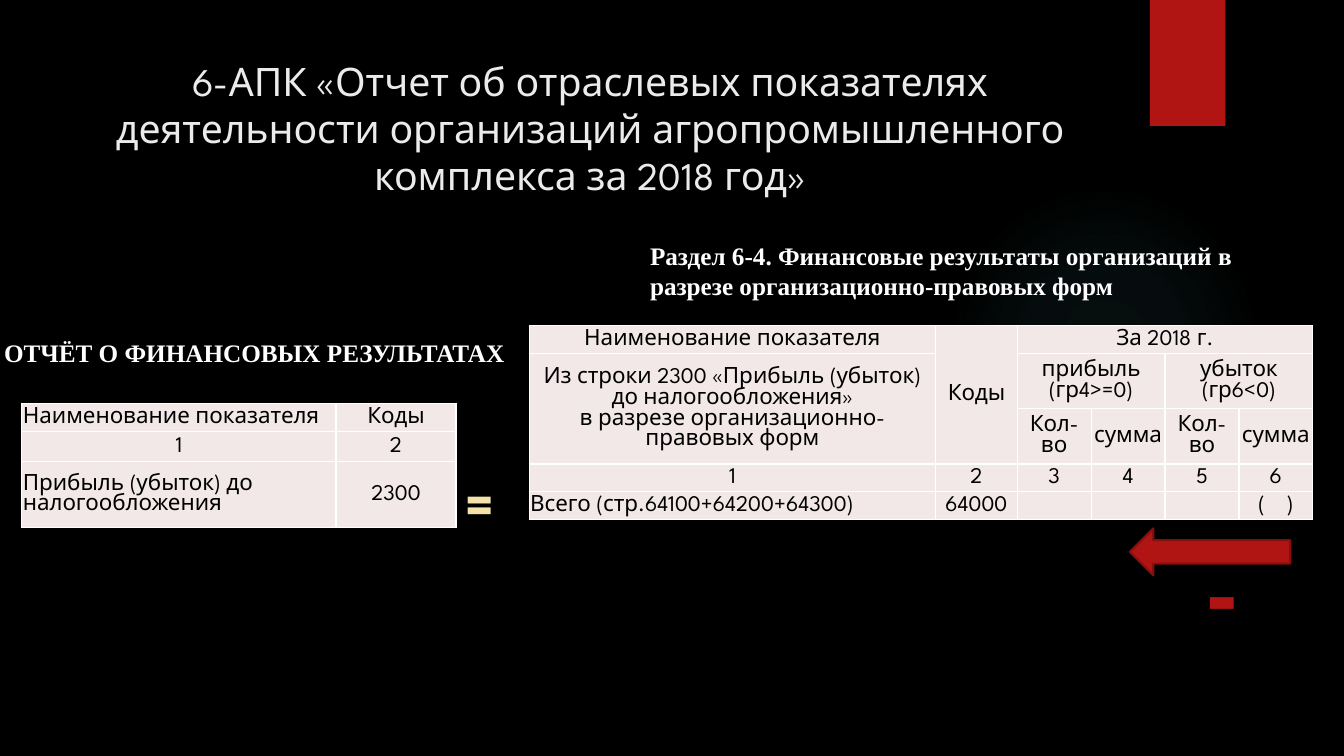
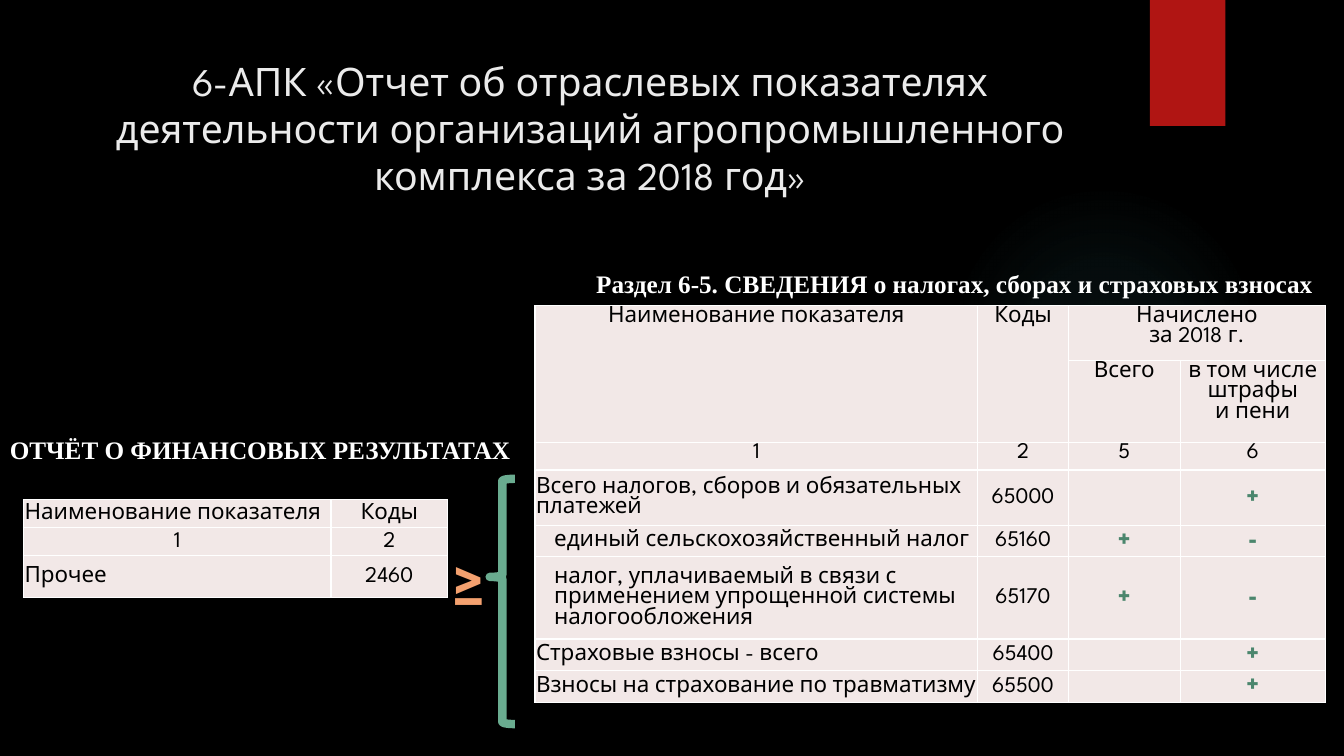
from lxml import etree
from pptx import Presentation
from pptx.dml.color import RGBColor
from pptx.enum.shapes import MSO_SHAPE
from pptx.enum.text import MSO_ANCHOR, PP_ALIGN
from pptx.oxml.ns import qn
from pptx.util import Inches, Pt

LEFT, CENTER = PP_ALIGN.LEFT, PP_ALIGN.CENTER
TOP, MIDDLE = MSO_ANCHOR.TOP, MSO_ANCHOR.MIDDLE
RECTANGLE, ELLIPSE = MSO_SHAPE.RECTANGLE, MSO_SHAPE.OVAL
LEFT_ARROW, LEFT_BRACE = MSO_SHAPE.LEFT_ARROW, MSO_SHAPE.LEFT_BRACE

SLIDE_WIDTH, SLIDE_HEIGHT = Inches(13.333), Inches(7.5)
GRID_COLUMNS = 160
UNIT = SLIDE_WIDTH / GRID_COLUMNS

SANS, SERIF = "League Spartan", "Times New Roman"
COLORS = {
    "background": "000000",
    "title": "EBEBEB",
    "heading": "FFFFFF",
    "glow": "50B9C1",
    "red": "B01513",
    "dark_red": "82100E",
    "cell": "F2E8E7",
    "cell_text": "000000",
    "border": "FFFFFF",
    "equals": "F5E2A9",
    "at_least": "F4A16F",
    "sign": "4B866D",
    "brace": "6AAC90",
}
TITLE = ("6-АПК «Отчет об отраслевых показателях деятельности организаций "
         "агропромышленного комплекса за 2018 год»")
REPORT = "ОТЧЁТ О ФИНАНСОВЫХ РЕЗУЛЬТАТАХ"
REPORT_HEADER = [["Наименование показателя", "Коды"], ["1", "2"]]
CELL_MARGIN, CELL_INDENT = Inches(0.01), Inches(0.19)


def grid(*lengths):
    return [round(length * UNIT) for length in lengths]


def color(name):
    return RGBColor.from_string(COLORS[name])


def write(text_frame, text, size=16, font=SANS, ink="cell_text", bold=False,
          align=LEFT):
    text_frame.text = text
    for paragraph in text_frame.paragraphs:
        paragraph.alignment = align
        for run in paragraph.runs:
            run.font.size = Pt(size)
            run.font.name = font
            run.font.bold = bold
            run.font.color.rgb = color(ink)
        if not text:
            end = etree.SubElement(paragraph._p, qn("a:endParaRPr"), sz=str(size * 100))
            etree.SubElement(end, qn("a:latin"), typeface=font)


def add_text(slide, area, text, wrap=True, anchor=TOP, **style):
    text_frame = slide.shapes.add_textbox(*grid(*area)).text_frame
    text_frame.word_wrap = wrap
    text_frame.vertical_anchor = anchor
    write(text_frame, text, **style)


def add_heading(slide, area, text, wrap=True):
    add_text(slide, area, text, wrap, size=18, font=SERIF, ink="heading", bold=True)


def add_shape(slide, kind, area, fill=None, line=None, line_width=1):
    shape = slide.shapes.add_shape(kind, *grid(*area))
    shape.shadow.inherit = False
    if fill:
        shape.fill.solid()
        shape.fill.fore_color.rgb = color(fill)
    else:
        shape.fill.background()
    if line:
        shape.line.color.rgb = color(line)
        shape.line.width = Pt(line_width)
    else:
        shape.line.fill.background()
    return shape


def add_glow(slide):
    shape = add_shape(slide, ELLIPSE, (112.9, 22, 37, 37))
    gradient = etree.Element(qn("a:gradFill"), rotWithShape="1")
    stops = etree.SubElement(gradient, qn("a:gsLst"))
    for position, opacity in ((0, 7), (36, 6), (69, 0)):
        stop = etree.SubElement(stops, qn("a:gs"), pos=str(position * 1000))
        tint = etree.SubElement(stop, qn("a:srgbClr"), val=COLORS["glow"])
        etree.SubElement(tint, qn("a:alpha"), val=str(opacity * 1000))
    center = etree.SubElement(gradient, qn("a:path"), path="circle")
    sides = dict.fromkeys("ltrb", "50000")
    etree.SubElement(center, qn("a:fillToRect"), **sides)
    properties = shape._element.spPr
    properties.replace(properties.find(qn("a:noFill")), gradient)


def add_borders(cell):
    properties = cell._tc.get_or_add_tcPr()
    for side in ("lnL", "lnR", "lnT", "lnB"):
        line = etree.SubElement(properties, qn(f"a:{side}"), w=str(Pt(1)))
        fill = etree.SubElement(line, qn("a:solidFill"))
        etree.SubElement(fill, qn("a:srgbClr"), val=COLORS["border"])


def fill_cell(cell, text, align, anchor, indent):
    cell.margin_left = indent
    cell.margin_right = cell.margin_top = CELL_MARGIN
    cell.margin_bottom = 0
    cell.vertical_anchor = anchor
    add_borders(cell)
    cell.fill.solid()
    cell.fill.fore_color.rgb = color("cell")
    if text in ("+", "-"):
        write(cell.text_frame, text, size=18, ink="sign", bold=True, align=align)
    else:
        write(cell.text_frame, text, align=align)


def add_table(slide, corner, widths, heights, rows, merges=(), left_rows=(),
              indented_rows=(), top_rows=0):
    area = grid(*corner, sum(widths), sum(heights))
    table = slide.shapes.add_table(len(rows), len(widths), *area).table
    for column, width in zip(table.columns, grid(*widths)):
        column.width = width
    for row, height in zip(table.rows, grid(*heights)):
        row.height = height
    for row_index, row in enumerate(rows):
        for column_index, text in enumerate(row):
            is_label = column_index == 0
            fill_cell(
                table.cell(row_index, column_index), text,
                LEFT if is_label and row_index in left_rows else CENTER,
                TOP if row_index < top_rows else MIDDLE,
                CELL_INDENT if is_label and row_index in indented_rows else CELL_MARGIN)
    for first, last in merges:
        table.cell(*first).merge(table.cell(*last))


def add_report(slide, label_corner, corner, widths, heights, row):
    add_heading(slide, (*label_corner, 62.6, 4.8), REPORT, wrap=False)
    add_table(slide, corner, widths, heights, REPORT_HEADER + [row], left_rows=(0, 2))


def add_base_slide(presentation):
    slide = presentation.slides.add_slide(presentation.slide_layouts[6])
    slide.background.fill.solid()
    slide.background.fill.fore_color.rgb = color("background")
    add_glow(slide)
    add_shape(slide, RECTANGLE, (136.9, 0, 9, 15), fill="red")
    add_text(slide, (8.5, 6, 123.5, 18.4), TITLE, anchor=MIDDLE, size=28,
             ink="title", align=CENTER)
    return slide


def add_profit_slide(presentation):
    slide = add_base_slide(presentation)
    add_heading(slide, (76.2, 28, 80, 8.5),
                "Раздел 6-4. Финансовые результаты организаций в разрезе "
                "организационно-правовых форм")
    add_report(slide, (-0.7, 39.6), (2.6, 48), (37.4, 14.3), (3.3, 3.6, 7.9),
               ["Прибыль (убыток) до налогообложения", "2300"])
    add_text(slide, (54.2, 55.2, 6.5, 9.2), "=", wrap=False, size=40,
             ink="equals", bold=True)
    rows = [
        ["Наименование показателя", "Коды", "За 2018 г.", "", "", ""],
        ["Из строки 2300 «Прибыль (убыток) до налогообложения»\n"
         "в разрезе организационно-правовых форм", "",
         "прибыль (гр4>=0)", "", "убыток (гр6<0)", ""],
        ["", "", "Кол-во", "сумма", "Кол-во", "сумма"],
        ["1", "2", "3", "4", "5", "6"],
        ["Всего (стр.64100+64200+64300)", "64000", "", "", "", "(    )"],
    ]
    merges = [((0, 1), (2, 1)), ((0, 2), (0, 5)), ((1, 0), (2, 0)),
              ((1, 2), (1, 3)), ((1, 4), (1, 5))]
    add_table(slide, (63, 38.8), (48.4, 9.7, 8.8, 8.8, 8.8, 8.8),
              (3.3, 6.5, 6.6, 3.3, 3.3), rows, merges, left_rows=(4,))
    add_text(slide, (142.3, 62.8, 7.1, 14.5), "-", size=66, ink="red", bold=True)
    add_shape(slide, LEFT_ARROW, (134.5, 62.9, 19.1, 5.6), "red", "dark_red", 1.5)


def add_tax_slide(presentation):
    slide = add_base_slide(presentation)
    add_heading(slide, (69.8, 31.4, 90.1, 4.8),
                "Раздел 6-5. СВЕДЕНИЯ о налогах, сборах и страховых взносах")
    add_report(slide, (0, 51.1), (2.8, 59.5), (36.6, 13.9), (3.3, 3.3, 5),
               ["Прочее", "2460"])
    rows = [
        ["Наименование показателя", "Коды", "Начислено\nза 2018 г.", ""],
        ["", "", "Всего", "в том числе штрафы\nи пени"],
        ["1", "2", "5", "6"],
        ["Всего налогов, сборов и обязательных платежей", "65000", "", "+"],
        ["единый сельскохозяйственный налог", "65160", "+", "-"],
        ["налог, уплачиваемый в связи с применением упрощенной системы "
         "налогообложения", "65170", "+", "-"],
        ["Страховые взносы - всего", "65400", "", "+"],
        ["Взносы на страхование по травматизму", "65500", "", "+"],
    ]
    merges = [((0, 0), (1, 0)), ((0, 1), (1, 1)), ((0, 2), (0, 3))]
    add_table(slide, (63.7, 36.4), (52.7, 10.8, 13.3, 17.3),
              (6.5, 9.7, 3.3, 6.6, 3.7, 9.8, 3.7, 3.8), rows, merges,
              left_rows=range(3, 8), indented_rows=(4, 5), top_rows=3)
    brace = add_shape(slide, LEFT_BRACE, (58.3, 57, 3, 29.2), line="brace",
                      line_width=6)
    brace.adjustments[0], brace.adjustments[1] = 0.08, 0.4
    add_text(slide, (52.8, 64.8, 6.1, 9.2), "≥", wrap=False, size=40,
             ink="at_least", bold=True)


def main():
    presentation = Presentation()
    presentation.slide_width, presentation.slide_height = SLIDE_WIDTH, SLIDE_HEIGHT
    add_profit_slide(presentation)
    add_tax_slide(presentation)
    presentation.save("out.pptx")


if __name__ == "__main__":
    main()
